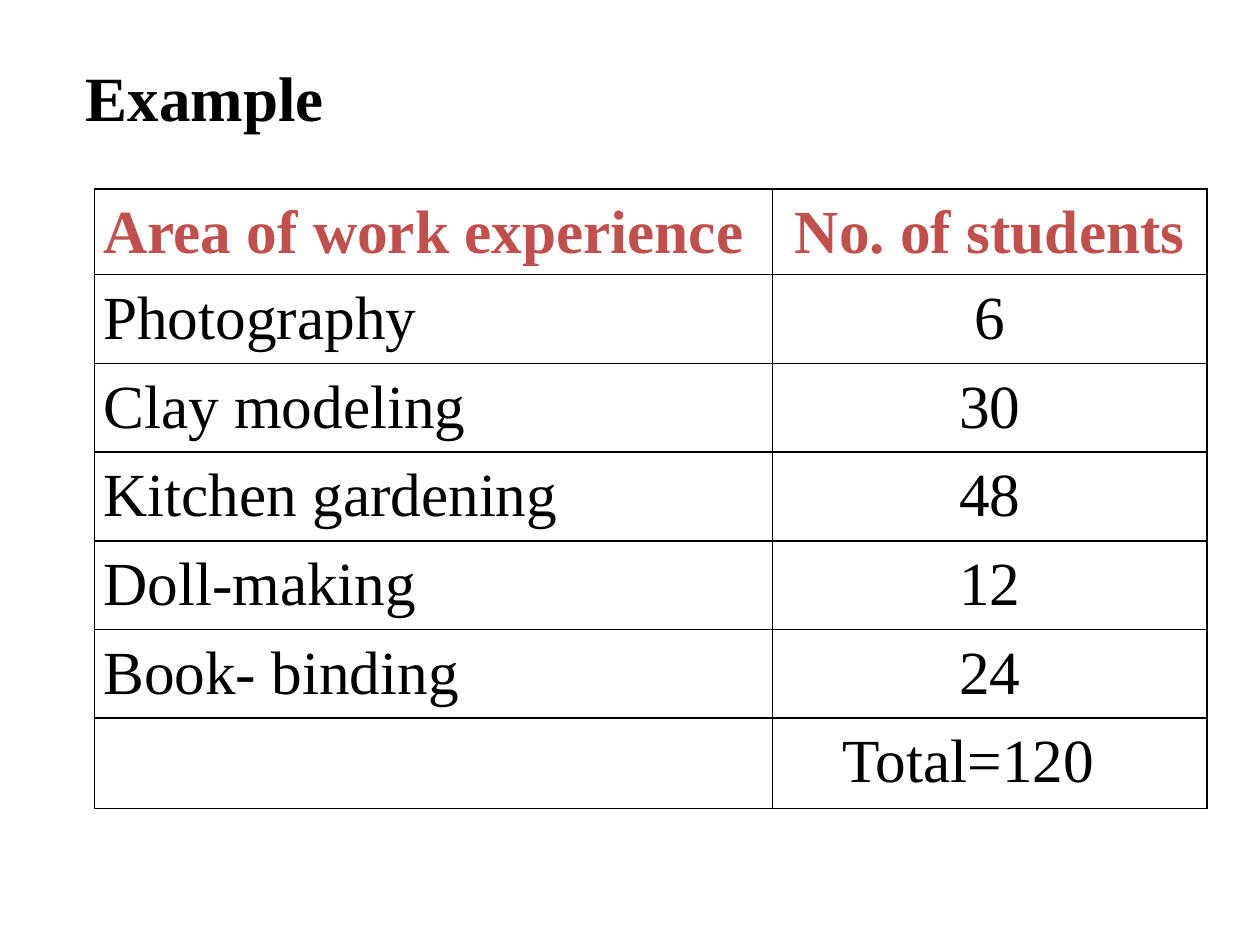
from lxml.etree import SubElement
from pptx import Presentation
from pptx.dml.color import RGBColor
from pptx.enum.text import PP_ALIGN
from pptx.oxml.ns import qn
from pptx.util import Pt


def color(hex_value):
    return RGBColor.from_string(hex_value)


class SlideBuilder:
    """Hold the style and the current slide, and add styled elements to it."""

    font_name = "Times New Roman"
    black = "000000"
    accent = "C0504D"

    def __init__(self, slide):
        self.slide = slide

    def style(self, paragraph, size, hex_value, bold):
        font = paragraph.font
        font.name, font.size, font.bold = self.font_name, Pt(size), bold
        font.color.rgb = color(hex_value)

    def text(self, left, top, width, height, wording, size):
        shape = self.slide.shapes.add_textbox(Pt(left), Pt(top), Pt(width), Pt(height))
        shape.text_frame.word_wrap = True
        shape.text_frame.text = wording
        self.style(shape.text_frame.paragraphs[0], size, self.black, True)

    def border(self, cell):
        properties = cell._tc.get_or_add_tcPr()
        for index, side in enumerate(("lnL", "lnR", "lnT", "lnB")):
            line = SubElement(properties, qn(f"a:{side}"), w=str(Pt(1)))
            fill = SubElement(line, qn("a:solidFill"))
            SubElement(fill, qn("a:srgbClr"), val=self.black)
            properties.insert(index, line)

    def cell(self, cell, wording, size, header, alignment):
        cell.fill.background()
        self.border(cell)
        cell.margin_left = cell.margin_right = Pt(5)
        cell.margin_top = cell.margin_bottom = Pt(0)
        cell.text = wording
        paragraph = cell.text_frame.paragraphs[0]
        paragraph.alignment = alignment
        paragraph.line_spacing = 1.15
        self.style(paragraph, size, self.accent if header else self.black, header)

    def table(self, left, top, widths, heights, rows, size):
        frame = self.slide.shapes.add_table(
            len(rows), len(widths), Pt(left), Pt(top), Pt(sum(widths)), Pt(sum(heights))
        )
        table = frame.table
        for column, width in zip(table.columns, widths):
            column.width = Pt(width)
        for row_index, (wordings, height) in enumerate(zip(rows, heights)):
            table.rows[row_index].height = Pt(height)
            for column_index, wording in enumerate(wordings):
                alignment = PP_ALIGN.CENTER if column_index else PP_ALIGN.LEFT
                cell = table.cell(row_index, column_index)
                self.cell(cell, wording, size, row_index == 0, alignment)
        return table


def main():
    presentation = Presentation()
    presentation.slide_width, presentation.slide_height = Pt(720), Pt(540)
    builder = SlideBuilder(presentation.slides.add_slide(presentation.slide_layouts[6]))

    rows = [
        ("Area of work experience", "No. of students"),
        ("Photography", "6"),
        ("Clay modeling", "30"),
        ("Kitchen gardening", "48"),
        ("Doll-making", "12"),
        ("Book- binding", "24"),
        ("", "Total=120"),
    ]
    heights = [49] + [50.7] * 5 + [51.5]
    table = builder.table(54, 108, (387.5, 248.3), heights, rows, 35)
    total = table.cell(len(rows) - 1, 1)
    total.margin_left = Pt(40)
    total.text_frame.paragraphs[0].alignment = PP_ALIGN.LEFT

    builder.text(42, 30, 168, 51, "Example", 36)
    presentation.save("out.pptx")


if __name__ == "__main__":
    main()
